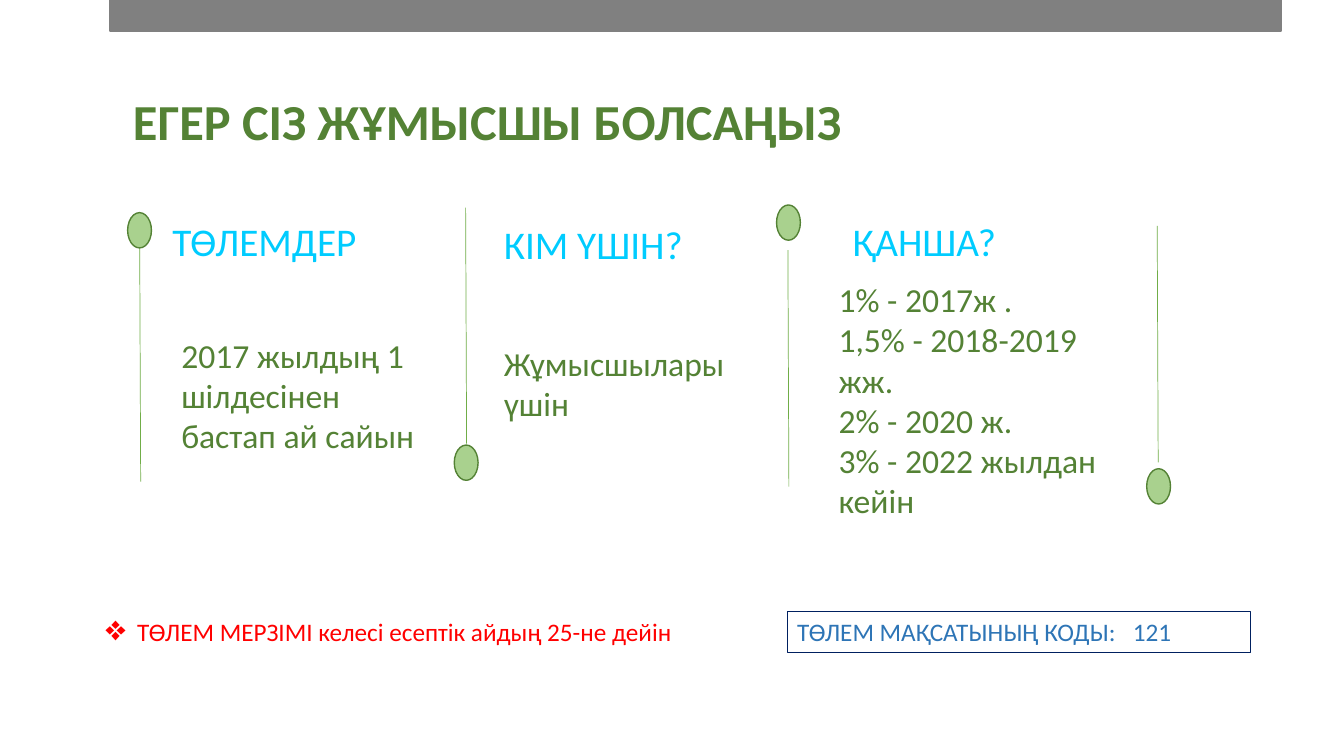
"""Build the slide «ЕГЕР СІЗ ЖҰМЫСШЫ БОЛСАҢЫЗ»."""
import lxml.etree
import pptx
import pptx.dml.color
import pptx.enum.shapes
import pptx.enum.text
import pptx.oxml.ns
import pptx.util

Pt = pptx.util.Pt
qn = pptx.oxml.ns.qn
SHAPES = pptx.enum.shapes.MSO_SHAPE

GREEN, CYAN, BLUE, RED = "548235", "00CCFF", "2E75B6", "FF0000"
TITLE = ("ЕГЕР СІЗ ЖҰМЫСШЫ БОЛСАҢЫЗ", (87.8, 61, 688.3, 51))
HEADINGS = [
    ("ТӨЛЕМДЕР", (116, 152, 149, 41)),
    ("КІМ ҮШІН?", (352.8, 154, 144, 41)),
    ("ҚАНША?", (602, 152, 118, 41)),
]
ANSWERS = [
    ("2017 жылдың 1 шілдесінен бастап ай сайын", (122.4, 235.6, 193.7, 94)),
    ("Жұмысшылары үшін", (352.8, 241.3, 190, 66)),
]
RATES = (
    ["1% - 2017ж .", "1,5% - 2018-2019 жж.", "2% - 2020 ж.", "3% - 2022 жылдан кейін"],
    (591.8, 195.5, 215.3, 181),
)
DEADLINE = ("ТӨЛЕМ МЕРЗІМІ келесі есептік айдың 25-не дейін", (68.4, 437, 480.2, 29))
CODE = ("ТӨЛЕМ МАҚСАТЫНЫҢ КОДЫ:\t121", (562.3, 437, 331.2, 29))
CODE_TAB = 239.8
BULLET_INDENT = 22.5
BAR = (78.5, 0, 836.6, 22.3)

STEM_LENGTH, STEM_LEAN = 169, 0.7
STEM_TOPS = [(99.8, 175), (332.6, 148.3), (562.8, 178.6), (826.6, 161.3)]
KNOB_WIDTH, KNOB_HEIGHT = 17, 25.2
KNOB_CENTRES = [(99.7, 164.5), (333, 330.5), (563.2, 159), (827.6, 347.4)]


def rgb(value):
    """Turn a hex string into a colour."""
    return pptx.dml.color.RGBColor.from_string(value)


def place(part, box):
    """Move a part to left, top, width, height in points."""
    part.left, part.top, part.width, part.height = (Pt(length) for length in box)


def write(part, lines, size, colour, bold=False):
    """Fill a part with left-aligned paragraphs and return them."""
    frame = part.text_frame
    frame.text = "\n".join(lines)
    frame.word_wrap = True
    frame.auto_size = pptx.enum.text.MSO_AUTO_SIZE.NONE
    frame.vertical_anchor = pptx.enum.text.MSO_ANCHOR.TOP
    for paragraph in frame.paragraphs:
        paragraph.alignment = pptx.enum.text.PP_ALIGN.LEFT
        paragraph.space_before = Pt(0)
        paragraph.font.name = "Calibri"
        paragraph.font.size = Pt(size)
        paragraph.font.bold = bold
        paragraph.font.color.rgb = rgb(colour)
    return frame.paragraphs


def add_text(slide, line, box, size, colour):
    """Add a one-paragraph text box and return its paragraph."""
    part = slide.shapes.add_textbox(*(Pt(length) for length in box))
    return write(part, [line], size, colour)[0]


def add_shape(slide, preset, box, fill, line, weight=1):
    """Add a flat preset shape, unfilled when fill is None."""
    part = slide.shapes.add_shape(preset, *(Pt(length) for length in box))
    part.shadow.inherit = False
    if fill:
        part.fill.solid()
        part.fill.fore_color.rgb = rgb(fill)
    else:
        part.fill.background()
    part.line.color.rgb = rgb(line)
    part.line.width = Pt(weight)
    return part


def add_property(paragraph, tag, **attributes):
    """Insert a paragraph property ahead of the default run font."""
    element = lxml.etree.Element(qn(tag), attributes)
    paragraph._p.pPr.find(qn("a:defRPr")).addprevious(element)
    return element


def set_indent(paragraph, hanging):
    """Set a hanging indent in points."""
    paragraph._p.pPr.set("marL", str(Pt(hanging)))
    paragraph._p.pPr.set("indent", str(-Pt(hanging)))


def add_stem(slide, left, top):
    """Add a thin, slightly leaning divider."""
    stem = slide.shapes.add_connector(
        pptx.enum.shapes.MSO_CONNECTOR.STRAIGHT,
        Pt(left), Pt(top), Pt(left + STEM_LEAN), Pt(top + STEM_LENGTH))
    stem.line.color.rgb = rgb("70AD47")
    stem.line.width = Pt(0.5)
    lxml.etree.SubElement(stem._element.spPr, qn("a:effectLst"))


def main():
    """Lay out the slide and save it."""
    deck = pptx.Presentation()
    deck.slide_width, deck.slide_height = Pt(960), Pt(540)
    slide = deck.slides.add_slide(deck.slide_layouts[1])

    add_shape(slide, SHAPES.RECTANGLE, BAR, "808080", "808080")
    title, rates = slide.placeholders
    place(title, TITLE[1])
    write(title, [TITLE[0]], 36, GREEN, bold=True)
    place(rates, RATES[1])
    for rate in write(rates, RATES[0], 24, GREEN):
        add_property(rate, "a:buNone")
        set_indent(rate, 0)

    for stem_top in STEM_TOPS:
        add_stem(slide, *stem_top)
    for x, y in KNOB_CENTRES:
        knob = (x - KNOB_WIDTH / 2, y - KNOB_HEIGHT / 2, KNOB_WIDTH, KNOB_HEIGHT)
        add_shape(slide, SHAPES.OVAL, knob, "A9D18E", GREEN)

    for heading, box in HEADINGS:
        add_text(slide, heading, box, 28, CYAN)
    for answer, box in ANSWERS:
        add_text(slide, answer, box, 24, GREEN)

    code = add_shape(slide, SHAPES.RECTANGLE, CODE[1], None, "002060", 0.75)
    code_line = write(code, [CODE[0]], 18, BLUE)[0]
    tabs = add_property(code_line, "a:tabLst")
    lxml.etree.SubElement(tabs, qn("a:tab"), pos=str(Pt(CODE_TAB)), algn="l")

    deadline = add_text(slide, *DEADLINE, 18, RED)
    bullet_colour = add_property(deadline, "a:buClr")
    lxml.etree.SubElement(bullet_colour, qn("a:srgbClr"), val=RED)
    add_property(deadline, "a:buSzPct", val="140000")
    add_property(deadline, "a:buChar", char="❖")
    set_indent(deadline, BULLET_INDENT)

    deck.save("out.pptx")


if __name__ == "__main__":
    main()
